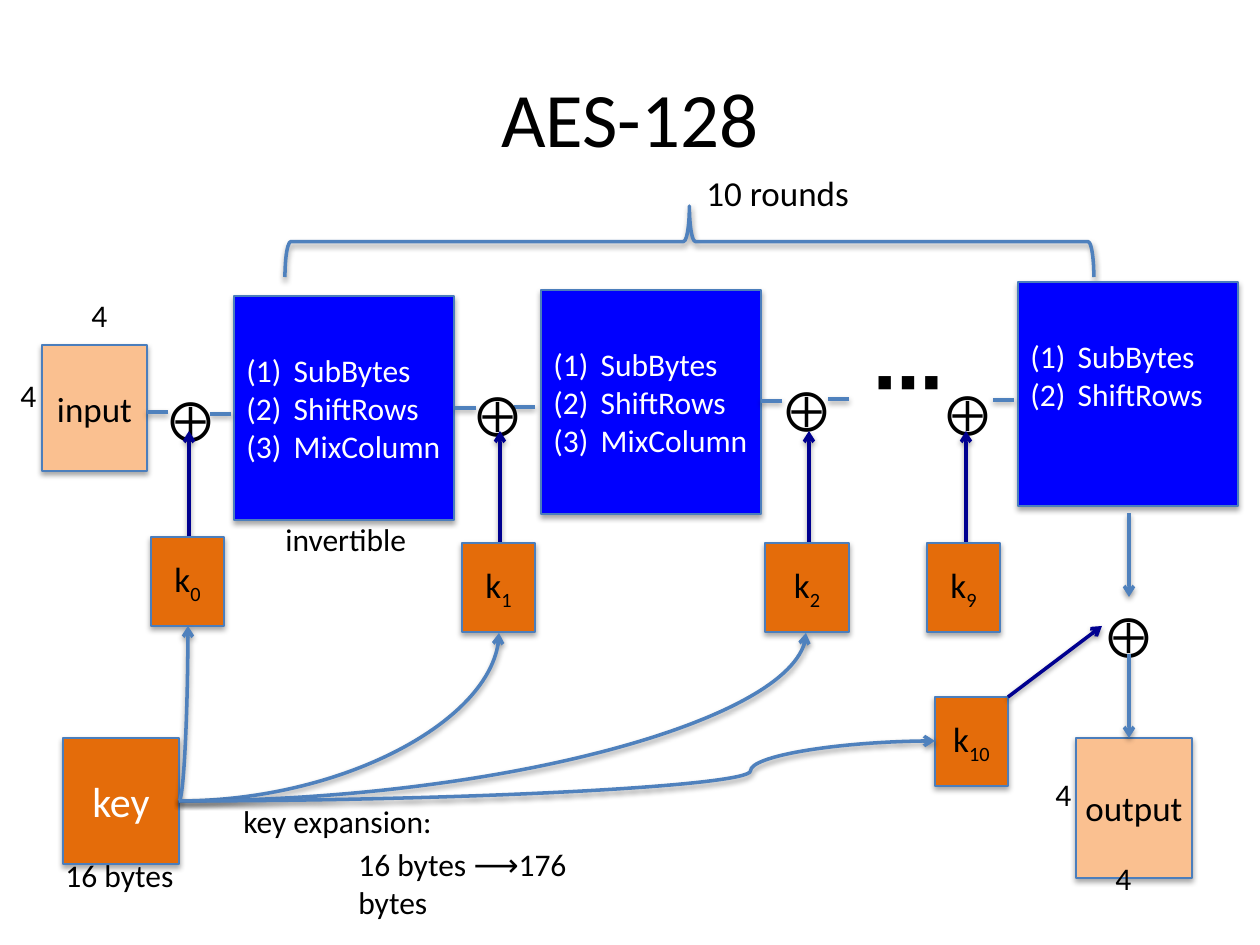
import lxml.etree
import pptx
import pptx.dml.color
import pptx.enum.shapes
import pptx.enum.text
import pptx.oxml
import pptx.oxml.ns
import pptx.util

RGB = pptx.dml.color.RGBColor
BLACK = RGB(0x00, 0x00, 0x00)
WHITE = RGB(0xFF, 0xFF, 0xFF)
STATE_PEACH = RGB(0xFA, 0xC0, 0x90)
KEY_ORANGE = RGB(0xE4, 0x6C, 0x0A)
ROUND_BLUE = RGB(0x00, 0x00, 0xFF)
BORDER_BLUE = RGB(0x4B, 0x7E, 0xBC)
FLOW_BLUE = RGB(0x4F, 0x81, 0xBD)
KEY_NAVY = RGB(0x00, 0x00, 0x90)

SHAPE = pptx.enum.shapes.MSO_SHAPE
CONNECTOR = pptx.enum.shapes.MSO_CONNECTOR
ALIGN = pptx.enum.text.PP_ALIGN
ANCHOR = pptx.enum.text.MSO_ANCHOR
AUTO_SIZE = pptx.enum.text.MSO_AUTO_SIZE
SCALE = pptx.util.Inches(1) / 126
qn = pptx.oxml.ns.qn


def px(length):
    return round(length * SCALE)


def apply(target, values):
    for name, value in values.items():
        setattr(target, name, value)


class Diagram:
    font = "Calibri"
    fitted = {"word_wrap": False, "auto_size": AUTO_SIZE.SHAPE_TO_FIT_TEXT}
    centred = {"word_wrap": True, "vertical_anchor": ANCHOR.MIDDLE}

    def __init__(self, slide):
        self.slide = slide

    def styled_run(self, paragraph, text, size, color=BLACK, bold=False):
        run = paragraph.add_run()
        run.text = text
        apply(run.font, {"name": self.font, "size": pptx.util.Pt(size), "bold": bold})
        run.font.color.rgb = color
        return run

    def shadow(self, element, opacity, distance):
        properties = element.spPr
        effects = properties.find(qn("a:effectLst"))
        if effects is None:
            effects = lxml.etree.SubElement(properties, qn("a:effectLst"))
        effects.append(pptx.oxml.parse_xml(
            f'<a:outerShdw {pptx.oxml.ns.nsdecls("a")} blurRad="40000" dist="{distance}" '
            'dir="5400000" rotWithShape="0"><a:srgbClr val="000000">'
            f'<a:alpha val="{opacity}000"/></a:srgbClr></a:outerShdw>'))

    def label(self, x, y, width, height, text, size=18, rotation=0, bold=False,
              align=ALIGN.LEFT, frame_format=fitted):
        box = self.slide.shapes.add_textbox(px(x), px(y), px(width), px(height))
        box.rotation = rotation
        apply(box.text_frame, frame_format)
        paragraph = box.text_frame.paragraphs[0]
        paragraph.alignment = align
        self.styled_run(paragraph, text, size, bold=bold)

    def xor(self, x, y):
        self.label(x, y, 63, 63, "⨁", 24, rotation=270)

    def block(self, x, y, width, height, fill, text="", size=20, color=BLACK, margins=None):
        box = self.slide.shapes.add_shape(SHAPE.RECTANGLE, px(x), px(y), px(width), px(height))
        box.fill.solid()
        box.fill.fore_color.rgb = fill
        box.line.color.rgb = BORDER_BLUE
        box.line.width = pptx.util.Pt(0.75)
        box.shadow.inherit = False
        self.shadow(box._element, 35, 23000)
        apply(box.text_frame, {**self.centred, **(margins or {})})
        paragraph = box.text_frame.paragraphs[0]
        paragraph.alignment = ALIGN.CENTER
        if text:
            self.styled_run(paragraph, text, size, color)
        return box.text_frame

    def round_key(self, x, y, index, width=73):
        paragraph = self.block(x, y, width, 89, KEY_ORANGE, "k").paragraphs[0]
        subscript = self.styled_run(paragraph, index, 20)
        subscript._r.get_or_add_rPr().set("baseline", "-25000")

    def round_steps(self, x, y, steps, margin_bottom=6):
        margins = {"margin_right": 0, "margin_bottom": px(margin_bottom)}
        frame = self.block(x, y, 220, 224, ROUND_BLUE, margins=margins)
        for number, step in enumerate(steps):
            paragraph = frame.add_paragraph() if number else frame.paragraphs[0]
            paragraph.alignment = ALIGN.LEFT
            self.styled_run(paragraph, step, 18, WHITE)
            properties = paragraph._p.get_or_add_pPr()
            properties.set("marL", "342900")
            properties.set("indent", "-342900")
            numbering = lxml.etree.SubElement(properties, qn("a:buAutoNum"))
            numbering.set("type", "arabicParenBoth")

    def brace(self, x, y, width, height):
        brace = self.slide.shapes.add_shape(
            SHAPE.RIGHT_BRACE, px(x), px(y), px(width), px(height))
        brace.rotation = 270
        brace.fill.background()
        brace.line.color.rgb = FLOW_BLUE
        brace.line.width = pptx.util.Pt(2)
        brace.shadow.inherit = False
        self.shadow(brace._element, 38, 20000)

    def line(self, start, end, color=FLOW_BLUE, arrow=True, kind=CONNECTOR.STRAIGHT):
        link = self.slide.shapes.add_connector(kind, *map(px, start + end))
        link.line.color.rgb = color
        link.line.width = pptx.util.Pt(2)
        if arrow:
            tail = lxml.etree.SubElement(link.line._get_or_add_ln(), qn("a:tailEnd"))
            tail.set("type", "arrow")
        self.shadow(link._element, 38, 20000)
        return link

    def dash(self, x, y):
        self.line((x, y), (x + 21, y), arrow=False)

    def curve(self, start, end, bend=None):
        link = self.line(start, end, kind=CONNECTOR.CURVE)
        geometry = link._element.spPr.find(qn("a:prstGeom"))
        if bend is None:
            geometry.set("prst", "curvedConnector2")
        else:
            guide = lxml.etree.SubElement(geometry.find(qn("a:avLst")), qn("a:gd"))
            guide.set("name", "adj1")
            guide.set("fmla", f"val {bend}")


def main():
    deck = pptx.Presentation()
    deck.slide_width, deck.slide_height = px(1260), px(945)
    aes = Diagram(deck.slides.add_slide(deck.slide_layouts[6]))

    aes.label(63, 38, 1134, 157, "AES-128", 44, align=ALIGN.CENTER, frame_format=aes.centred)
    aes.brace(654, -163, 71, 809)
    aes.label(694, 165, 170, 55, "10 rounds", 20)

    aes.block(42, 345, 105, 126, STATE_PEACH, "input")
    aes.block(1076, 738, 116, 140, STATE_PEACH, "output",
              margins={"margin_left": 0, "margin_right": 0})
    for x, y in ((79, 290), (8, 370), (1103, 853), (1043, 769)):
        aes.label(x, y, 41, 50, "4")

    steps = ["SubBytes", "ShiftRows", "MixColumn"]
    aes.round_steps(234, 296, steps)
    aes.round_steps(541, 290, steps)
    aes.round_steps(1018, 282, steps[:2], margin_bottom=44)
    aes.label(861, 331, 60, 97, "⋯", 40, bold=True)

    for x, y in ((147, 412), (210, 414), (455, 408), (514, 407),
                 (761, 401), (828, 399), (993, 400)):
        aes.dash(x, y)

    for index, xor_x, xor_y, arrow_x, key_x, key_y, width in (
            ("0", 154, 393, 189, 151, 537, 73),
            ("1", 461, 388, 500, 462, 543, 73),
            ("2", 770, 383, 809, 765, 543, 84),
            ("9", 931, 387, 966, 927, 543, 73)):
        aes.xor(xor_x, xor_y)
        aes.line((arrow_x, 564), (arrow_x, 431), KEY_NAVY)
        aes.round_key(key_x, key_y, index, width)

    aes.xor(1092, 609)
    aes.line((1129, 513), (1129, 597))
    aes.line((1129, 654), (1129, 738))
    aes.round_key(935, 697, "10")
    aes.line((1008, 697), (1102, 626), KEY_NAVY)

    aes.block(63, 738, 116, 126, KEY_ORANGE, "key", 24, WHITE)
    key_exit = (179, 801)
    for target in ((499, 633), (806, 633), (188, 626)):
        aes.curve(key_exit, target)
    aes.curve(key_exit, (935, 741), bend=75600)

    aes.label(53, 850, 135, 50, "16 bytes")
    aes.label(231, 796, 217, 50, "key expansion:")
    aes.label(273, 514, 149, 50, "invertible")
    aes.label(346, 839, 305, 50, "16 bytes ⟶176 bytes", frame_format={"word_wrap": True})

    deck.save("out.pptx")


if __name__ == "__main__":
    main()
